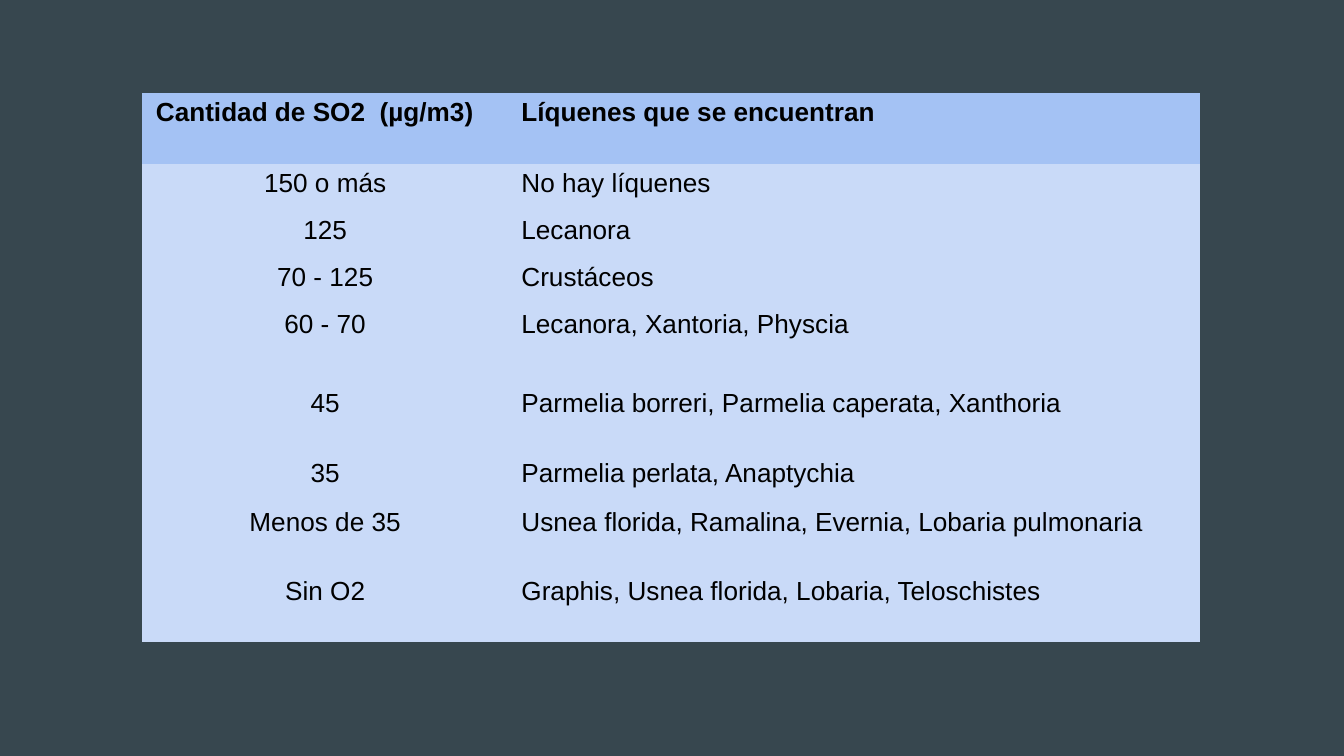
"""Build a slide with a table of lichens found at each SO2 level."""
from dataclasses import dataclass

from pptx import Presentation
from pptx.dml.color import RGBColor
from pptx.enum.text import PP_ALIGN
from pptx.table import Table, _Cell
from pptx.util import Inches, Pt

LEFT, CENTER = PP_ALIGN.LEFT, PP_ALIGN.CENTER
COLORS = {"background": "37474F", "header": "A4C2F4", "body": "C9DAF8", "text": "000000"}
FONT, FONT_SIZE, LINE_SPACING = "Arial", 14, 0.93
NO_GRID_STYLE = "{2D5ABB26-0587-4C30-8999-92F81FD0307C}"

SLIDE_WIDTH = Inches(10)
SLIDE_HEIGHT = SLIDE_WIDTH * 9 // 16
UNIT = SLIDE_WIDTH // 1000
TABLE_COL, TABLE_ROW = 106, 69
COLUMN_SPANS = (272, 515)


@dataclass(frozen=True)
class LichenRow:
    amount: str
    lichens: str
    span: int
    header: bool = False


ROWS = (
    LichenRow("Cantidad de SO2  (µg/m3)", "Líquenes que se encuentran", 53, header=True),
    LichenRow("150 o más", "No hay líquenes", 35),
    LichenRow("125", "Lecanora", 35),
    LichenRow("70 - 125", "Crustáceos", 35),
    LichenRow("60 - 70", "Lecanora, Xantoria, Physcia", 59),
    LichenRow("45", "Parmelia borreri, Parmelia caperata, Xanthoria", 52),
    LichenRow("35", "Parmelia perlata, Anaptychia", 36),
    LichenRow("Menos de 35", "Usnea florida, Ramalina, Evernia, Lobaria pulmonaria", 52),
    LichenRow("Sin O2", "Graphis, Usnea florida, Lobaria, Teloschistes", 52),
)


def rgb(name: str) -> RGBColor:
    return RGBColor.from_string(COLORS[name])


def fill_cell(cell: _Cell, text: str, align: PP_ALIGN, header: bool) -> None:
    cell.fill.solid()
    cell.fill.fore_color.rgb = rgb("header" if header else "body")
    p = cell.text_frame.paragraphs[0]
    p.text = text
    p.alignment = align
    p.line_spacing = LINE_SPACING
    font = p.runs[0].font
    font.name, font.size, font.bold = FONT, Pt(FONT_SIZE), header
    font.color.rgb = rgb("text")


def fill_row(table: Table, index: int, row: LichenRow) -> None:
    table.rows[index].height = row.span * UNIT
    fill_cell(table.cell(index, 0), row.amount, LEFT if row.header else CENTER, row.header)
    fill_cell(table.cell(index, 1), row.lichens, LEFT, row.header)


def main() -> None:
    prs = Presentation()
    prs.slide_width, prs.slide_height = SLIDE_WIDTH, SLIDE_HEIGHT
    s = prs.slides.add_slide(prs.slide_layouts[6])
    s.background.fill.solid()
    s.background.fill.fore_color.rgb = rgb("background")

    width, height = sum(COLUMN_SPANS), sum(row.span for row in ROWS)
    frame = s.shapes.add_table(
        len(ROWS), len(COLUMN_SPANS),
        TABLE_COL * UNIT, TABLE_ROW * UNIT, width * UNIT, height * UNIT,
    )
    table = frame.table
    table.first_row = table.horz_banding = False
    table._tbl.tblPr[0].text = NO_GRID_STYLE
    for column, span in zip(table.columns, COLUMN_SPANS):
        column.width = span * UNIT
    for index, row in enumerate(ROWS):
        fill_row(table, index, row)
    prs.save("out.pptx")


if __name__ == "__main__":
    main()
